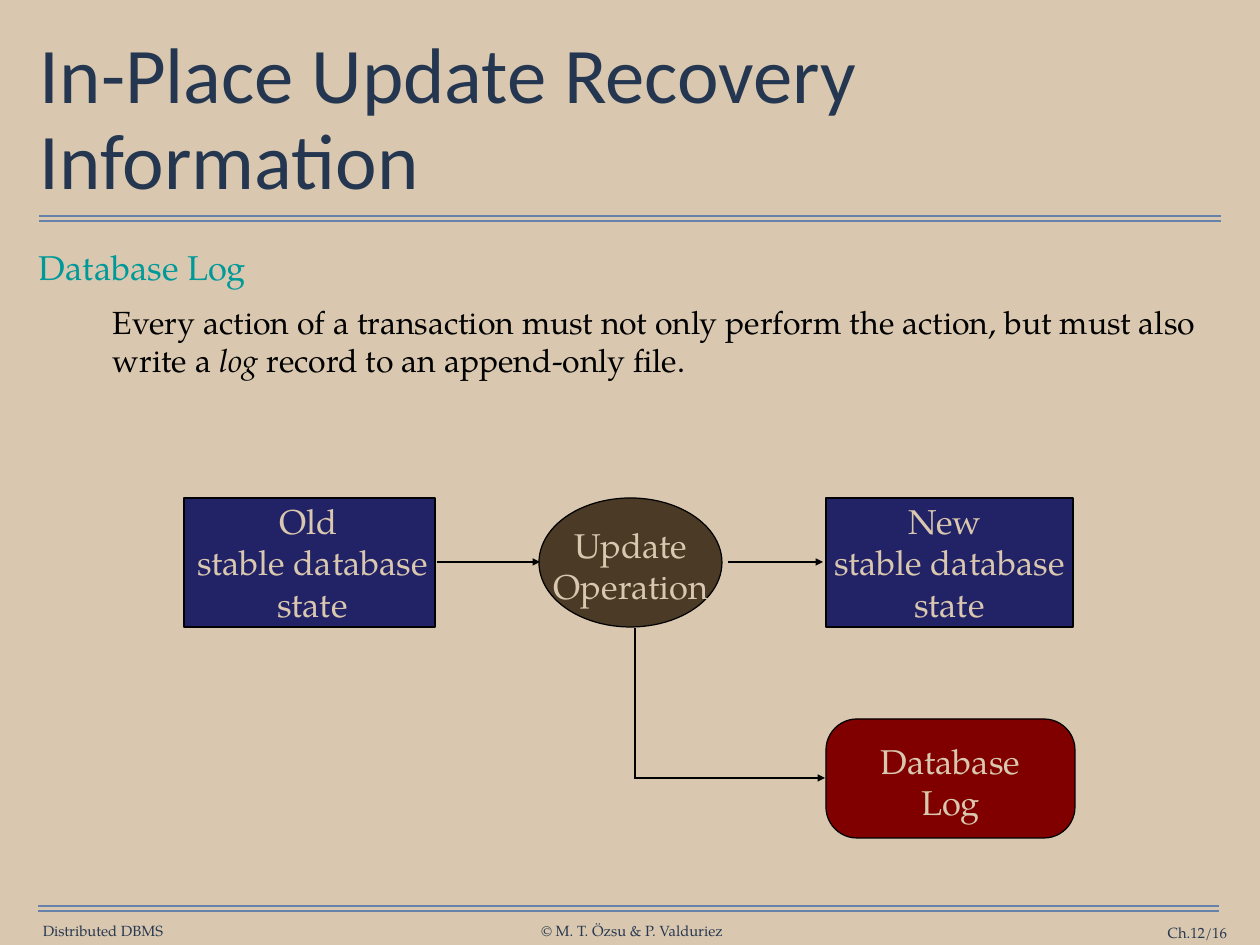
from lxml import etree
from pptx import Presentation
from pptx import util as u
from pptx.dml.color import RGBColor
from pptx.enum import shapes, text
from pptx.oxml.ns import qn

# Content: boxes are left, top, width, height in px
TITLE = "In-Place Update Recovery Information"
BODY = [
    ("heading", 0, [("Database Log", False)]),
    ("body", 74, [
        ("Every action of a transaction must not only perform the action, "
         "but must also write a ", False),
        ("log", True),
        (" record to an append-only file.", False)]),
]
NODES = [
    ("RECTANGLE", "state", (184, 498, 251, 129), (183, 494, 259, 141),
     ["Old ", "stable database", "state"]),
    ("OVAL", "operation", (539, 498, 183, 129), (540, 518, 182, 96),
     ["Update", "Operation"]),
    ("RECTANGLE", "state", (826, 498, 247, 129), (820, 494, 259, 141),
     ["New ", "stable database", "state"]),
    ("ROUNDED_RECTANGLE", "log", (826, 719, 249, 119), (867, 734, 167, 99),
     ["Database", "Log"]),
]
FLOWS = [  # x1, y1, x2, y2, arrowhead
    (437, 562, 540, 562, True),
    (728, 562, 823, 562, True),
    (635, 779, 635, 628, False),
    (636, 778, 825, 778, True),
]
RULES = [(39, 1221, 216), (38, 1219, 906)]  # x1, x2, y of each double rule
RULE_GAP = 5
FOOTERS = [
    ("Distributed DBMS", (42, 922, 122, 18), "CENTER"),
    ("© M. T. Özsu & P. Valduriez", (540, 922, 184, 18), "CENTER"),
    ("Ch.12/16", (1091, 924, 136, 18), "RIGHT"),
]

SERIF = "TeX Gyre Pagella"
THEME = {
    "fill": {"page": "D9C8AF", "state": "222267", "operation": "4A3A26",
             "log": "800000", "ink": "000000", "rule": "6682AA"},
    "type": {  # font, size, colour
        "title": ("Calibri", 64, "253750"),
        "heading": (SERIF, 28, "009999"),
        "body": (SERIF, 26, "000000"),
        "label": (SERIF, 28, "D9C8AF"),
        "footer": (SERIF, 12, "263750"),
    },
}
PX = 10320  # EMU per px


def px(*values):
    return [u.Emu(v * PX) for v in values]


def colour(name):
    return RGBColor.from_string(THEME["fill"][name])


def assign(obj, values):
    for name, value in values.items():
        setattr(obj, name, value)


def add_text(s, box, paragraphs, inset=(0, 0), anchor="TOP", wrap=False,
             align="LEFT", **spacing):
    """Each paragraph is (style, left indent, [(text, italic), ...])."""
    tf = s.shapes.add_textbox(*px(*box)).text_frame
    dx, dy = px(*inset)
    assign(tf, {"margin_left": dx, "margin_right": dx, "margin_top": dy,
                "margin_bottom": dy, "word_wrap": wrap,
                "vertical_anchor": getattr(text.MSO_ANCHOR, anchor)})
    for i, (style, indent, runs) in enumerate(paragraphs):
        p = tf.add_paragraph() if i else tf.paragraphs[0]
        assign(p, {"alignment": getattr(text.PP_ALIGN, align), **spacing})
        if i == 0:
            p.space_before = u.Pt(0)
        if indent:
            p._p.get_or_add_pPr().set("marL", str(indent * PX))
        name, size, rgb = THEME["type"][style]
        for words, italic in runs:
            r = p.add_run()
            r.text = words
            assign(r.font, {"name": name, "size": u.Pt(size), "italic": italic})
            r.font.color.rgb = RGBColor.from_string(rgb)


def add_line(s, ends, ink, width, arrow=False):
    c = s.shapes.add_connector(shapes.MSO_CONNECTOR.STRAIGHT, *px(*ends))
    c.line.color.rgb = colour(ink)
    c.line.width = u.Pt(width)
    if arrow:
        etree.SubElement(c.line._get_or_add_ln(), qn("a:tailEnd"), type="triangle")
    etree.SubElement(c._element.spPr, qn("a:effectLst"))


def add_node(s, kind, fill, box, label_box, lines):
    sp = s.shapes.add_shape(getattr(shapes.MSO_SHAPE, kind), *px(*box))
    sp.shadow.inherit = False
    sp.fill.solid()
    sp.fill.fore_color.rgb = colour(fill)
    sp.line.color.rgb = colour("ink")
    sp.line.width = u.Pt(1)
    if kind == "ROUNDED_RECTANGLE":
        sp.adjustments[0] = 0.26
    add_text(s, label_box, [("label", 0, [(line, False)]) for line in lines],
             inset=(12, 6), align="CENTER")


def main():
    prs = Presentation()
    prs.slide_width, prs.slide_height = px(1260, 945)
    s = prs.slides.add_slide(prs.slide_layouts[6])
    s.background.fill.solid()
    s.background.fill.fore_color.rgb = colour("page")

    # Double rules and footers
    for x1, x2, y in RULES:
        for rule_y in (y, y + RULE_GAP):
            add_line(s, (x1, rule_y, x2, rule_y), "rule", 1)
    for words, box, align in FOOTERS:
        add_text(s, box, [("footer", 0, [(words, False)])],
                 anchor="MIDDLE", align=align, wrap=align == "RIGHT")

    # Title and body
    add_text(s, (35, 43, 1191, 156), [("title", 0, [(TITLE, False)])],
             inset=(5, 5), anchor="MIDDLE", wrap=True, line_spacing=0.9)
    add_text(s, (34, 241, 1191, 656), BODY, inset=(5, 5), wrap=True,
             space_before=u.Pt(12))

    # Update diagram
    for node in NODES:
        add_node(s, *node)
    for *ends, arrow in FLOWS:
        add_line(s, ends, "ink", 1.5, arrow)

    prs.save("out.pptx")


if __name__ == "__main__":
    main()
